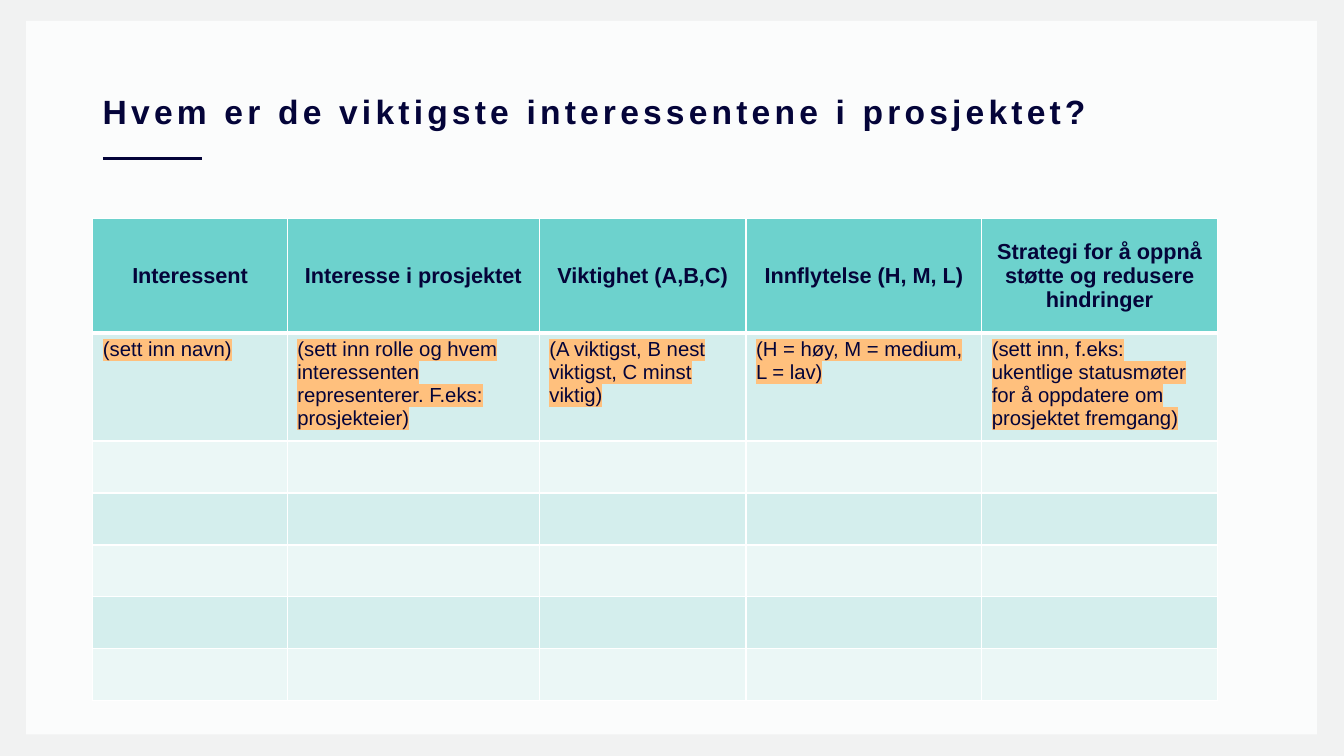
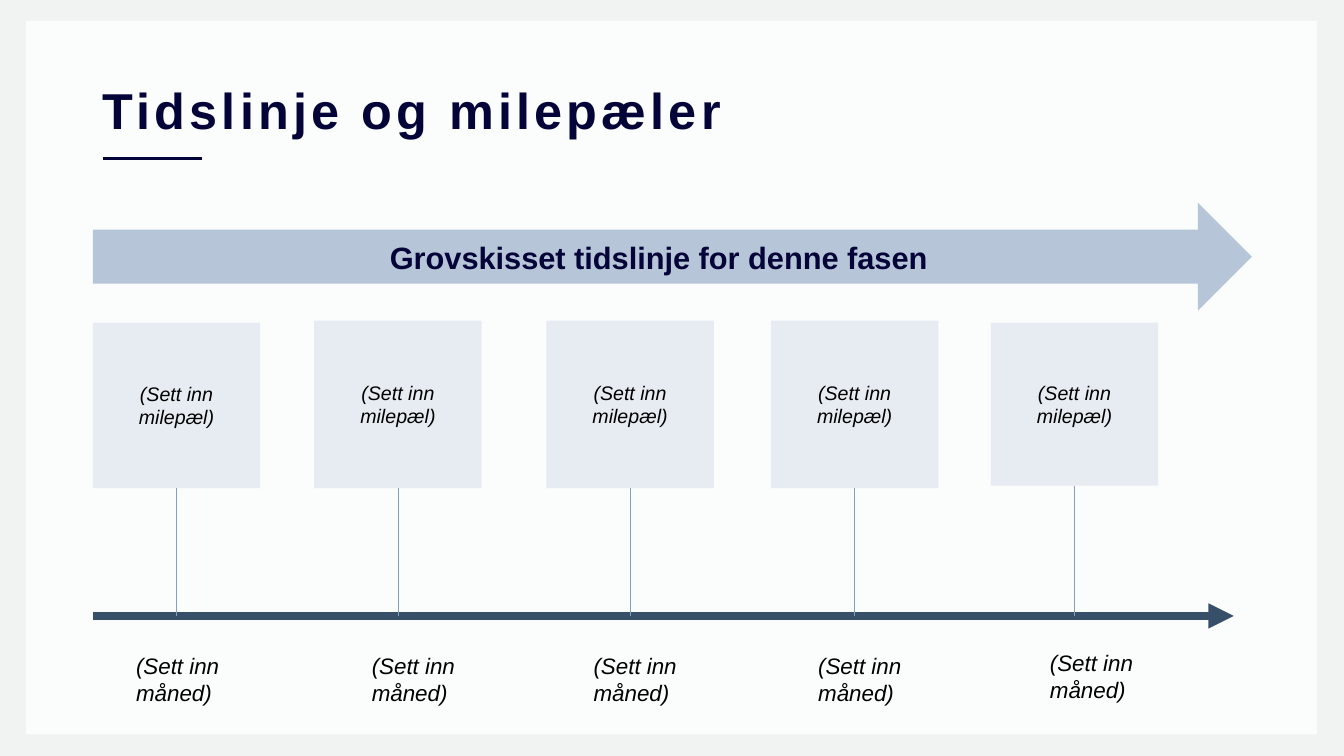
import pptx
import pptx.util
import pptx.dml.color
import pptx.enum.shapes
import pptx.enum.text
import pptx.oxml.ns
from lxml import etree

Cm = pptx.util.Cm
Pt = pptx.util.Pt
RGBColor = pptx.dml.color.RGBColor
Kind = pptx.enum.shapes.MSO_SHAPE
Align = pptx.enum.text.PP_ALIGN
Anchor = pptx.enum.text.MSO_ANCHOR

NAVY = RGBColor(0x04, 0x04, 0x39)
BLACK = RGBColor(0, 0, 0)
WHITE = RGBColor(0xFF, 0xFF, 0xFF)
GREY = RGBColor(0xF1, 0xF2, 0xF2)
PAPER = RGBColor(0xFB, 0xFC, 0xFC)
TEAL = RGBColor(0x6D, 0xD2, 0xCD)
MINT = RGBColor(0xD4, 0xEE, 0xED)
PALE = RGBColor(0xEB, 0xF7, 0xF6)
PEACH = RGBColor(0xFF, 0xC0, 0x7D)
STEEL = RGBColor(0xB6, 0xC6, 0xD8)
SLATE = RGBColor(0x38, 0x4F, 0x69)
MIST = RGBColor(0xE7, 0xEC, 0xF2)
STEM = RGBColor(0x85, 0xA0, 0xBE)

FONT = "Arial"
LEFT = 2.34
WIDE = 29.21
AXIS_Y = 15.52


def child(parent, tag, **attrs):
    return etree.SubElement(parent, pptx.oxml.ns.qn(tag), attrs)


class Deck:
    def __init__(self):
        self.prs = pptx.Presentation()
        self.prs.slide_width = Cm(33.87)
        self.prs.slide_height = Cm(19.05)
        self.slide = None

    def start(self, title, size):
        """Add a slide with the shared frame, title and rule."""
        self.slide = self.prs.slides.add_slide(self.prs.slide_layouts[6])
        back = self.slide.background.fill
        back.solid()
        back.fore_color.rgb = GREY
        self.shape(Kind.RECTANGLE, 0.66, 0.53, 32.53, 17.98, PAPER)
        self.line(2.59, 3.99, 5.1, 3.99, NAVY, 2)
        frame = self.label(LEFT, 1.02, WIDE, 3.68)
        frame.vertical_anchor = Anchor.MIDDLE
        run = self.text(frame, title, size, NAVY, bold=True)
        run._r.get_or_add_rPr().set("spc", "300")
        frame.paragraphs[0].line_spacing = 0.9

    def text(self, frame, words, size, color, bold=False, italic=False, align=Align.LEFT):
        para = frame.paragraphs[0]
        para.alignment = align
        run = para.add_run()
        run.text = words
        font = run.font
        font.name, font.size = FONT, Pt(size)
        font.bold, font.italic = bold, italic
        font.color.rgb = color
        return run

    def mark(self, run, color):
        """Highlight a run."""
        props = run._r.get_or_add_rPr()
        light = child(props, "a:highlight")
        child(light, "a:srgbClr", val=str(color))
        props.find(pptx.oxml.ns.qn("a:solidFill")).addnext(light)

    def label(self, x, y, w, h):
        box = self.slide.shapes.add_textbox(Cm(x), Cm(y), Cm(w), Cm(h))
        box.text_frame.word_wrap = True
        return box.text_frame

    def shape(self, kind, x, y, w, h, color):
        item = self.slide.shapes.add_shape(kind, Cm(x), Cm(y), Cm(w), Cm(h))
        item.shadow.inherit = False
        item.fill.solid()
        item.fill.fore_color.rgb = color
        item.line.fill.background()
        item.text_frame.word_wrap = True
        item.text_frame.vertical_anchor = Anchor.MIDDLE
        return item

    def line(self, x1, y1, x2, y2, color, width, arrow=False):
        link = self.slide.shapes.add_connector(
            pptx.enum.shapes.MSO_CONNECTOR.STRAIGHT, Cm(x1), Cm(y1), Cm(x2), Cm(y2))
        link.line.color.rgb = color
        link.line.width = Pt(width)
        props = link._element.spPr
        if arrow:
            child(props.find(pptx.oxml.ns.qn("a:ln")), "a:tailEnd", type="triangle")
        child(props, "a:effectLst")
        return link

    def edge(self, cell, base):
        """Draw white cell borders, the bottom one base points wide."""
        props = cell._tc.get_or_add_tcPr()
        for side, width in zip("LRTB", (1, 1, 1, base)):
            ln = child(props, "a:ln" + side, w=str(Pt(width)))
            child(child(ln, "a:solidFill"), "a:srgbClr", val=str(WHITE))

    def table(self, x, y, cols, rows, texts):
        grid = self.slide.shapes.add_table(
            len(rows), len(cols), Cm(x), Cm(y), Cm(sum(cols)), Cm(sum(rows))).table
        for col, width in zip(grid.columns, cols):
            col.width = Cm(width)
        for r, height in enumerate(rows):
            grid.rows[r].height = Cm(height)
            head = r == 0
            color = TEAL if head else MINT if r % 2 else PALE
            for c, cell in enumerate(grid.rows[r].cells):
                self.edge(cell, 3 if head else 1)
                cell.fill.solid()
                cell.fill.fore_color.rgb = color
                if r >= len(texts):
                    continue
                if head:
                    cell.vertical_anchor = Anchor.MIDDLE
                    self.text(cell.text_frame, texts[r][c], 15.5, NAVY,
                              bold=True, align=Align.CENTER)
                else:
                    self.mark(self.text(cell.text_frame, texts[r][c], 14.5, NAVY), PEACH)

    def stone(self, x, y, h):
        """Add a milestone box with a stem down to the axis."""
        box = self.shape(Kind.RECTANGLE, x, y, 4.22, h, MIST)
        self.text(box.text_frame, "(Sett inn milepæl)", 14, BLACK,
                  italic=True, align=Align.CENTER)
        mid = x + 2.11
        stem = self.line(mid, y + h, mid, AXIS_Y, STEM, 0.5)
        stem.begin_connect(box, 2)

    def month(self, x, y):
        self.text(self.label(x, y, 4.47, 1.63), "(Sett inn måned)", 16, BLACK, italic=True)


def people(deck):
    deck.start("Hvem er de viktigste interessentene i prosjektet?", 24)
    texts = [
        ["Interessent", "Interesse i prosjektet", "Viktighet (A,B,C)",
         "Innflytelse (H, M, L)", "Strategi for å oppnå støtte og redusere hindringer"],
        ["(sett inn navn)",
         "(sett inn rolle og hvem interessenten representerer. F.eks: prosjekteier)",
         "(A viktigst, B nest viktigst, C minst viktig)",
         "(H = høy, M = medium, L = lav)",
         "(sett inn, f.eks: ukentlige statusmøter for å oppdatere om prosjektet fremgang)"],
    ]
    deck.table(LEFT, 5.5, [4.9, 6.35, 5.21, 5.94, 5.94], [2.9, 2.64] + [1.31] * 5, texts)


def timeline(deck):
    deck.start("Tidslinje og milepæler", 36)
    arrow = deck.shape(Kind.RIGHT_ARROW, LEFT, 5.11, WIDE, 2.72, STEEL)
    deck.text(arrow.text_frame, "Grovskisset tidslinje for denne fasen", 22, NAVY,
              bold=True, align=Align.CENTER)
    deck.line(LEFT, AXIS_Y, 31.09, AXIS_Y, SLATE, 6, arrow=True)
    stones = [(LEFT, 8.13, 4.17), (7.92, 8.08, 4.22), (13.77, 8.08, 4.22),
              (19.43, 8.08, 4.22), (24.97, 8.13, 4.11)]
    months = [(3.18, 16.31), (9.12, 16.31), (14.71, 16.31), (20.37, 16.31), (26.21, 16.23)]
    for stone, month in zip(stones, months):
        deck.stone(*stone)
        deck.month(*month)


def main():
    deck = Deck()
    people(deck)
    timeline(deck)
    deck.prs.save("out.pptx")


if __name__ == "__main__":
    main()
